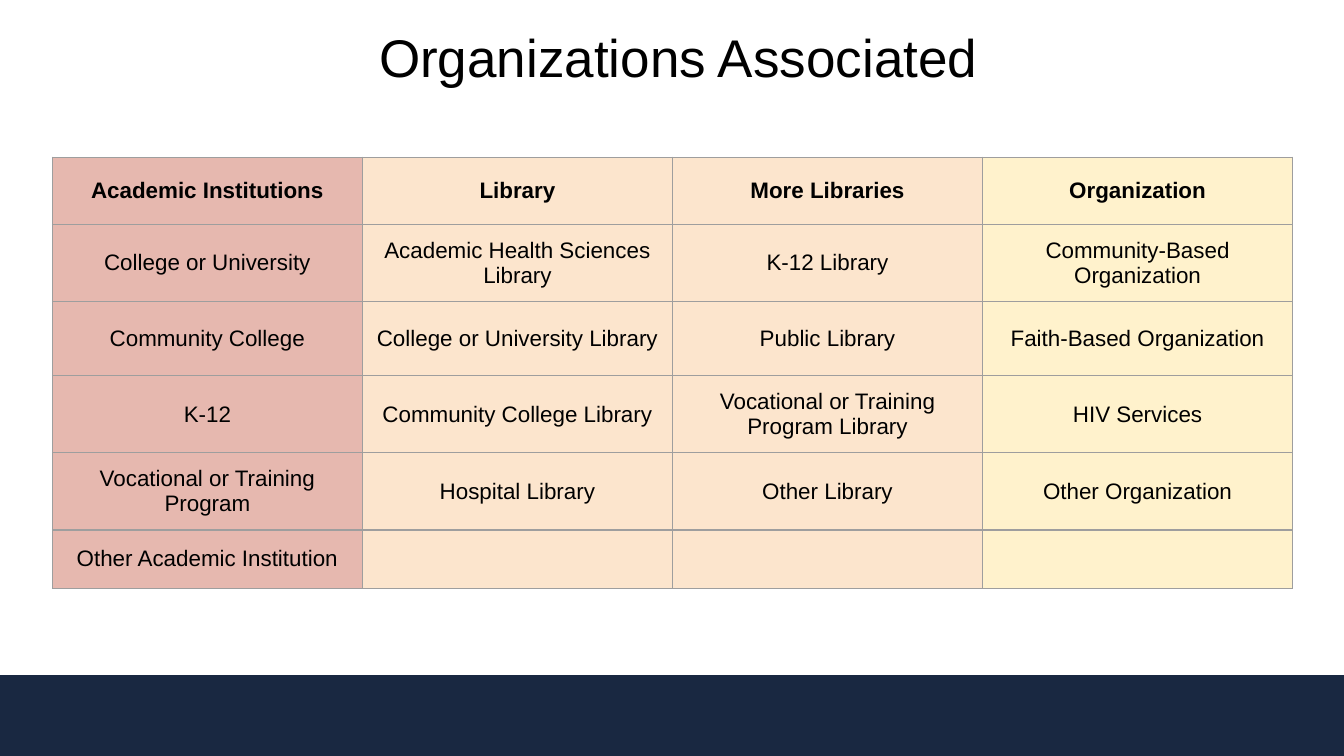
import pptx
import pptx.dml.color
import pptx.enum.shapes
import pptx.enum.text
import pptx.oxml
import pptx.oxml.ns
import pptx.util
import lxml.etree

Cm = pptx.util.Cm
Pt = pptx.util.Pt
RGBColor = pptx.dml.color.RGBColor

BLACK = RGBColor(0x00, 0x00, 0x00)
NAVY = RGBColor(0x19, 0x28, 0x41)
GREY = RGBColor(0x9E, 0x9E, 0x9E)
ROSE = RGBColor(0xE6, 0xB8, 0xAF)
PEACH = RGBColor(0xFC, 0xE5, 0xCD)
CREAM = RGBColor(0xFF, 0xF2, 0xCC)

INSET = Cm(0.25)
MARGINS = {f"margin_{side}": INSET for side in ("left", "top", "right", "bottom")}
MIDDLE = {"vertical_anchor": pptx.enum.text.MSO_ANCHOR.MIDDLE}
CENTER = {"alignment": pptx.enum.text.PP_ALIGN.CENTER}
TITLE_FONT = {"name": "Arial", "size": Pt(28.4), "bold": False}
CELL_FONT = {"name": "Arial", "size": Pt(12), "bold": False}
HEADER_FONT = {**CELL_FONT, "bold": True}

ROW_HEIGHTS = [Cm(height) for height in (1.27, 1.46, 1.4, 1.46, 1.46, 1.1)]
COLUMNS = [
    (ROSE, ["Academic Institutions", "College or University", "Community College",
            "K-12", "Vocational or Training Program", "Other Academic Institution"]),
    (PEACH, ["Library", "Academic Health Sciences Library",
             "College or University Library", "Community College Library",
             "Hospital Library"]),
    (PEACH, ["More Libraries", "K-12 Library", "Public Library",
             "Vocational or Training Program Library", "Other Library"]),
    (CREAM, ["Organization", "Community-Based Organization",
             "Faith-Based Organization", "HIV Services", "Other Organization"]),
]


def apply_format(target, values):
    for name, value in values.items():
        setattr(target, name, value)


def write_text(para, text, font):
    apply_format(para, CENTER)
    span = para.add_run()
    span.text = text
    apply_format(span.font, font)
    span.font.color.rgb = BLACK


def border_cell(cell):
    properties = cell._tc.get_or_add_tcPr()
    namespace = pptx.oxml.ns.nsdecls("a")
    for side in "LRTB":
        properties.append(pptx.oxml.parse_xml(
            f'<a:ln{side} {namespace} w="{Pt(0.75)}"><a:solidFill>'
            f'<a:srgbClr val="{GREY}"/></a:solidFill></a:ln{side}>'))


def size_empty_para(para, font):
    ending = lxml.etree.SubElement(para._p, pptx.oxml.ns.qn("a:endParaRPr"))
    ending.set("sz", str(int(font["size"].pt * 100)))


def add_footer_band(page, left, top, width, height):
    band = page.shapes.add_shape(
        pptx.enum.shapes.MSO_SHAPE.RECTANGLE, left, top, width, height)
    band.shadow.inherit = False
    band.fill.solid()
    band.fill.fore_color.rgb = NAVY
    band.line.color.rgb = NAVY
    band.line.width = Pt(1.5)


def add_title(page, left, top, width, height):
    box = page.shapes.add_textbox(left, top, width, height)
    apply_format(box.text_frame, {**MARGINS, **MIDDLE, "word_wrap": True})
    write_text(box.text_frame.paragraphs[0], "Organizations Associated", TITLE_FONT)


def add_organization_table(page, left, top, width):
    frame = page.shapes.add_table(
        len(ROW_HEIGHTS), len(COLUMNS), left, top, width, sum(ROW_HEIGHTS))
    table = frame.table
    apply_format(table, {"first_row": False, "horz_banding": False})
    for row, height in zip(table.rows, ROW_HEIGHTS):
        row.height = height
    for column_index, (colour, entries) in enumerate(COLUMNS):
        for row_index in range(len(ROW_HEIGHTS)):
            cell = table.cell(row_index, column_index)
            apply_format(cell, {**MARGINS, **MIDDLE})
            border_cell(cell)
            cell.fill.solid()
            cell.fill.fore_color.rgb = colour
            para = cell.text_frame.paragraphs[0]
            if row_index < len(entries):
                font = CELL_FONT if row_index else HEADER_FONT
                write_text(para, entries[row_index], font)
            else:
                size_empty_para(para, CELL_FONT)


def main():
    deck = pptx.Presentation()
    apply_format(deck, {"slide_width": Cm(25.4), "slide_height": Cm(14.29)})
    page = deck.slides.add_slide(deck.slide_layouts[6])
    add_footer_band(page, Cm(0), Cm(12.78), deck.slide_width, Cm(1.51))
    add_organization_table(page, Cm(0.99), Cm(2.97), Cm(23.44))
    add_title(page, Cm(0.99), Cm(-0.1), Cm(23.67), Cm(2.34))
    deck.save("out.pptx")


if __name__ == "__main__":
    main()
